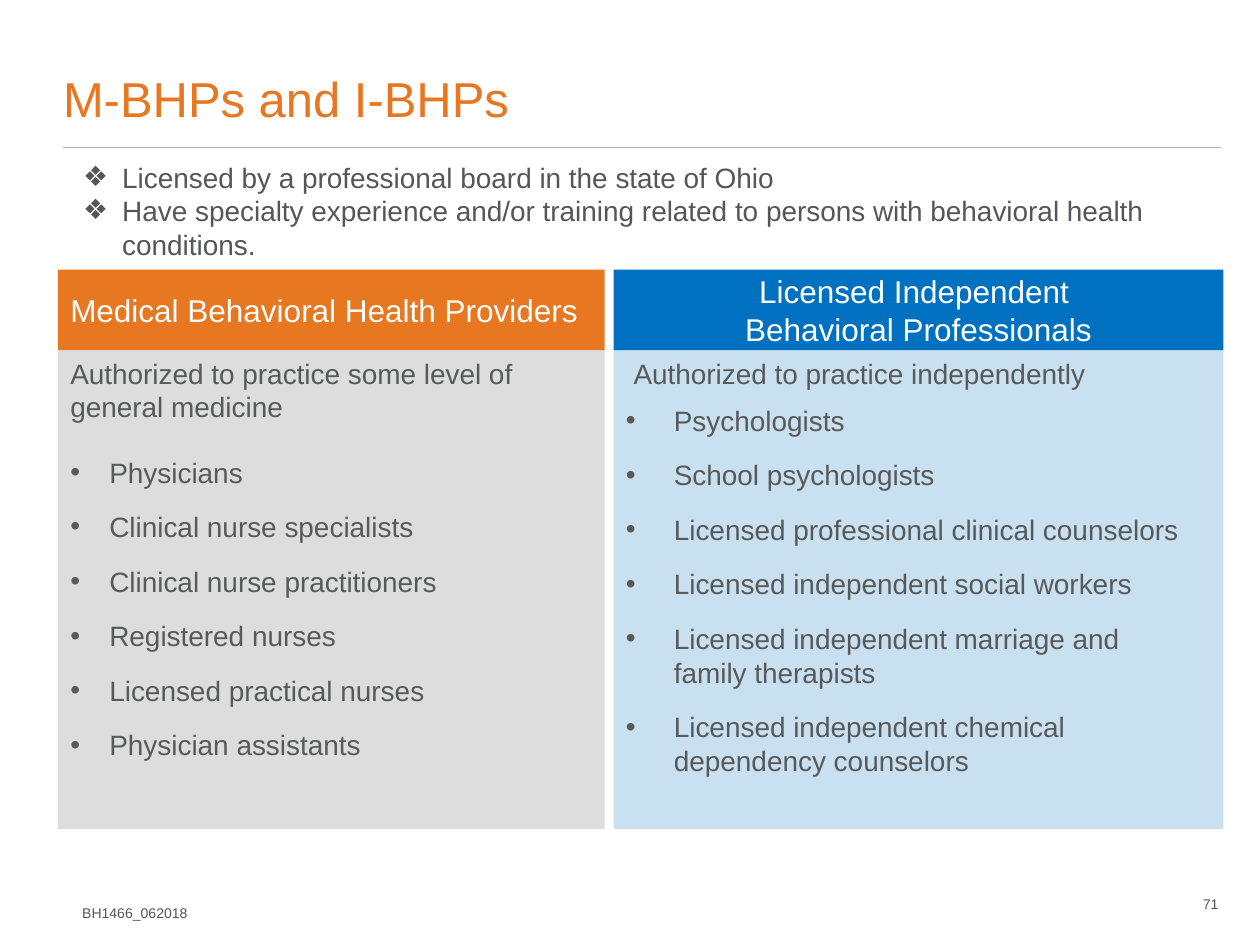
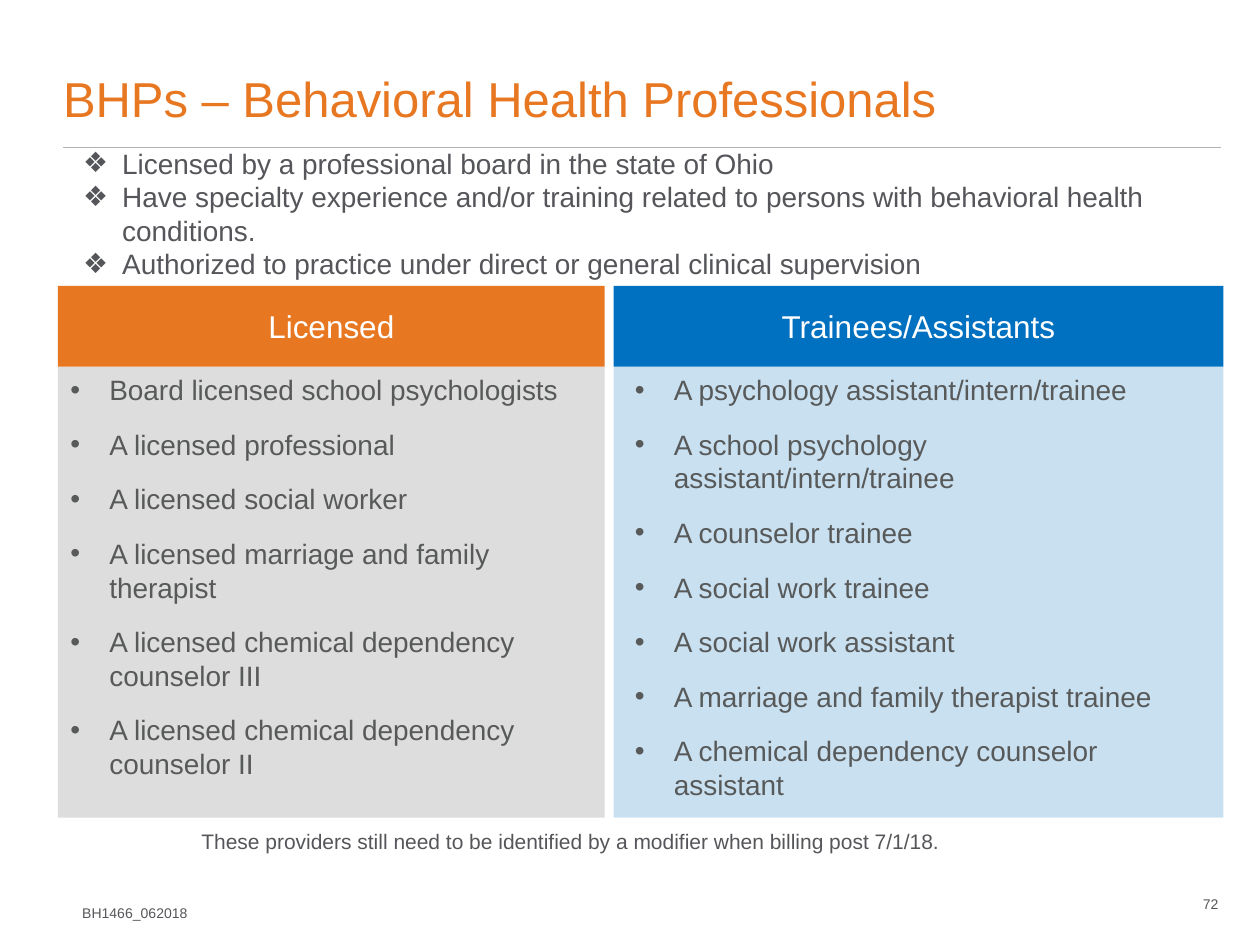
from dataclasses import dataclass, field
from typing import Optional

from lxml.etree import SubElement
from pptx import Presentation
from pptx.dml.color import RGBColor
from pptx.enum.shapes import MSO_CONNECTOR as Connector, MSO_SHAPE as Preset
from pptx.enum.text import MSO_ANCHOR as Anchor, MSO_AUTO_SIZE as AutoSize, PP_ALIGN as Align
from pptx.oxml.ns import qn
from pptx.util import Inches, Pt

COLOURS = {
    "orange": "E87722",
    "blue": "0070C0",
    "grey": "DDDDDE",
    "rule": "B1B3B3",
    "text": "55565A",
    "panel_text": "585A5A",
    "white": "FFFFFF",
}
FONT = "Arial"
NO_INSETS = {f"margin_{side}": 0 for side in ("left", "top", "right", "bottom")}
FRAME = {"word_wrap": True, "auto_size": AutoSize.NONE, "vertical_anchor": Anchor.TOP}
HEADER_HEIGHT = 0.64


@dataclass(frozen=True)
class TextStyle:
    size: float
    colour: str
    align: Align = Align.LEFT
    before: float = 0
    after: float = 0
    bullet: str = ""
    left: float = 0
    hanging: float = 0
    right: float = 0


@dataclass(frozen=True)
class Column:
    left: float
    width: float
    header_colour: str
    body_colour: str
    opacity: int = 100


@dataclass(frozen=True)
class Panel:
    column: Column
    header: str
    items: list[str]
    item_style: TextStyle
    lead: str = ""
    lead_style: Optional[TextStyle] = None
    header_align: Align = Align.CENTER


@dataclass(frozen=True)
class Page:
    number: int
    title: str
    intro: list[str]
    intro_top: float
    intro_height: float
    header_top: float
    bottom: float
    panels: list[Panel] = field(default_factory=list)
    note: str = ""


LEFT_COLUMN = Column(0.46, 4.34, "orange", "grey")
RIGHT_COLUMN = Column(4.87, 4.84, "blue", "blue", 21)

TITLE = TextStyle(28, "orange")
INTRO = TextStyle(16, "text", bullet="❖", left=0.31, hanging=0.31)
SMALL = TextStyle(8, "text", Align.RIGHT)
NOTE = TextStyle(12, "text")
LEAD = TextStyle(16, "panel_text", after=6)
INDENTED_LEAD = TextStyle(16, "panel_text", after=6, left=0.06)
LEFT_ITEM = TextStyle(16, "panel_text", before=12, bullet="•", left=0.31, hanging=0.31)
RIGHT_ITEM = TextStyle(16, "panel_text", before=12, bullet="•", left=0.38, hanging=0.31)
WIDE_ITEM = TextStyle(16, "panel_text", before=1.6, after=10.4, bullet="•",
                      left=0.38, hanging=0.38, right=0.2)

LICENSED = "Licensed by a professional board in the state of Ohio"
EXPERIENCED = ("Have specialty experience and/or training related to persons "
               "with behavioral health conditions.")

PAGES = [
    Page(
        71, "M-BHPs and I-BHPs", [LICENSED, EXPERIENCED], 1.22, 0.91, 2.14, 6.58,
        [
            Panel(
                LEFT_COLUMN,
                "Medical Behavioral Health Providers",
                [
                    "Physicians",
                    "Clinical nurse specialists",
                    "Clinical nurse practitioners",
                    "Registered nurses",
                    "Licensed practical nurses",
                    "Physician assistants",
                ],
                LEFT_ITEM,
                "Authorized to practice some level of general medicine",
                LEAD,
                Align.LEFT,
            ),
            Panel(
                RIGHT_COLUMN,
                "Licensed Independent \vBehavioral Professionals",
                [
                    "Psychologists",
                    "School psychologists",
                    "Licensed professional clinical counselors",
                    "Licensed independent social workers",
                    "Licensed independent marriage and family therapists",
                    "Licensed independent chemical dependency counselors",
                ],
                WIDE_ITEM,
                "Authorized to practice independently",
                INDENTED_LEAD,
            ),
        ],
    ),
    Page(
        72, "BHPs – Behavioral Health Professionals",
        [LICENSED, EXPERIENCED,
         "Authorized to practice under direct or general clinical supervision"],
        1.11, 1.18, 2.27, 6.49,
        [
            Panel(
                LEFT_COLUMN,
                "Licensed",
                [
                    "Board licensed school psychologists",
                    "A licensed professional",
                    "A licensed social worker",
                    "A licensed marriage and family therapist",
                    "A licensed chemical dependency counselor III",
                    "A licensed chemical dependency counselor II",
                ],
                LEFT_ITEM,
            ),
            Panel(
                RIGHT_COLUMN,
                "Trainees/Assistants",
                [
                    "A psychology assistant/intern/trainee",
                    "A school psychology assistant/intern/trainee",
                    "A counselor trainee",
                    "A social work trainee",
                    "A social work assistant",
                    "A marriage and family therapist trainee",
                    "A chemical dependency counselor assistant",
                ],
                RIGHT_ITEM,
            ),
        ],
        "These providers still need to be identified by a modifier when billing post 7/1/18.",
    ),
]


def colour(name: str) -> RGBColor:
    return RGBColor.from_string(COLOURS[name])


def set_values(target, values: dict) -> None:
    for name, value in values.items():
        setattr(target, name, value)


def place(box, left: float, top: float, width: float, height: float) -> None:
    set_values(box, {"left": Inches(left), "top": Inches(top),
                     "width": Inches(width), "height": Inches(height)})


def style_paragraph(para, style: TextStyle, first: bool) -> None:
    properties = para._p.get_or_add_pPr()
    properties.set("marL", str(Inches(style.left)))
    properties.set("marR", str(Inches(style.right)))
    properties.set("indent", str(-Inches(style.hanging)))
    if style.bullet:
        SubElement(properties, qn("a:buFont"), typeface=FONT)
        SubElement(properties, qn("a:buChar"), char=style.bullet)
    else:
        SubElement(properties, qn("a:buNone"))
    set_values(para, {"alignment": style.align,
                      "space_before": Pt(0 if first else style.before),
                      "space_after": Pt(style.after)})
    for span in para.runs:
        set_values(span.font, {"name": FONT, "size": Pt(style.size)})
        span.font.color.rgb = colour(style.colour)


def write(box, lines: list[tuple[str, TextStyle]], **frame_values) -> None:
    frame = box.text_frame
    set_values(frame, {**FRAME, **frame_values})
    for index, (text, style) in enumerate(lines):
        para = frame.add_paragraph() if index else frame.paragraphs[0]
        para.text = text
        style_paragraph(para, style, index == 0)


def add_label(page, area: tuple, text: str, style: TextStyle, **frame_values) -> None:
    box = page.shapes.add_textbox(*map(Inches, area))
    write(box, [(text, style)], **frame_values)


def add_block(page, area: tuple, fill: str, opacity: int = 100):
    box = page.shapes.add_shape(Preset.RECTANGLE, *map(Inches, area))
    box.shadow.inherit = False
    box.line.fill.background()
    box.fill.solid()
    box.fill.fore_color.rgb = colour(fill)
    if opacity < 100:
        tint = box.fill._xPr.find(qn("a:solidFill"))[0]
        SubElement(tint, qn("a:alpha"), val=str(opacity * 1000))
    return box


def add_panel(page, panel: Panel, top: float, bottom: float) -> None:
    column = panel.column
    body_top = top + HEADER_HEIGHT
    body = add_block(page, (column.left, body_top, column.width, bottom - body_top),
                     column.body_colour, column.opacity)
    lead = [(panel.lead, panel.lead_style)] if panel.lead else []
    write(body, lead + [(item, panel.item_style) for item in panel.items])
    header = add_block(page, (column.left, top, column.width, HEADER_HEIGHT),
                       column.header_colour)
    write(header, [(panel.header, TextStyle(18, "white", panel.header_align))],
          vertical_anchor=Anchor.MIDDLE)


def add_furniture(page, number: int) -> None:
    rule = page.shapes.add_connector(Connector.STRAIGHT, Inches(0.5), Inches(1.17),
                                     Inches(9.69), Inches(1.17))
    rule.line.color.rgb = colour("rule")
    rule.line.width = Pt(1)
    SubElement(rule._element.spPr, qn("a:effectLst"))
    add_label(page, (0.57, 7.18, 0.92, 0.13), "BH1466_062018", SMALL, **NO_INSETS)
    add_label(page, (9.25, 7.04, 0.42, 0.27), str(number), SMALL,
              vertical_anchor=Anchor.MIDDLE, **NO_INSETS)


def add_page(deck, content: Page) -> None:
    page = deck.slides.add_slide(deck.slide_layouts.get_by_name("Title and Content"))
    title, intro = page.shapes.title, page.placeholders[1]
    place(title, 0.5, 0.33, 9.18, 0.68)
    write(title, [(content.title, TITLE)], vertical_anchor=Anchor.BOTTOM, **NO_INSETS)
    place(intro, 0.56, content.intro_top, 9.15, content.intro_height)
    write(intro, [(line, INTRO) for line in content.intro])
    add_furniture(page, content.number)
    for panel in content.panels:
        add_panel(page, panel, content.header_top, content.bottom)
    if content.note:
        add_label(page, (1.5, 6.53, 6.3, 0.3), content.note, NOTE)


def main() -> None:
    deck = Presentation()
    set_values(deck, {"slide_width": Inches(10), "slide_height": Inches(7.5)})
    for content in PAGES:
        add_page(deck, content)
    deck.save("out.pptx")


if __name__ == "__main__":
    main()
